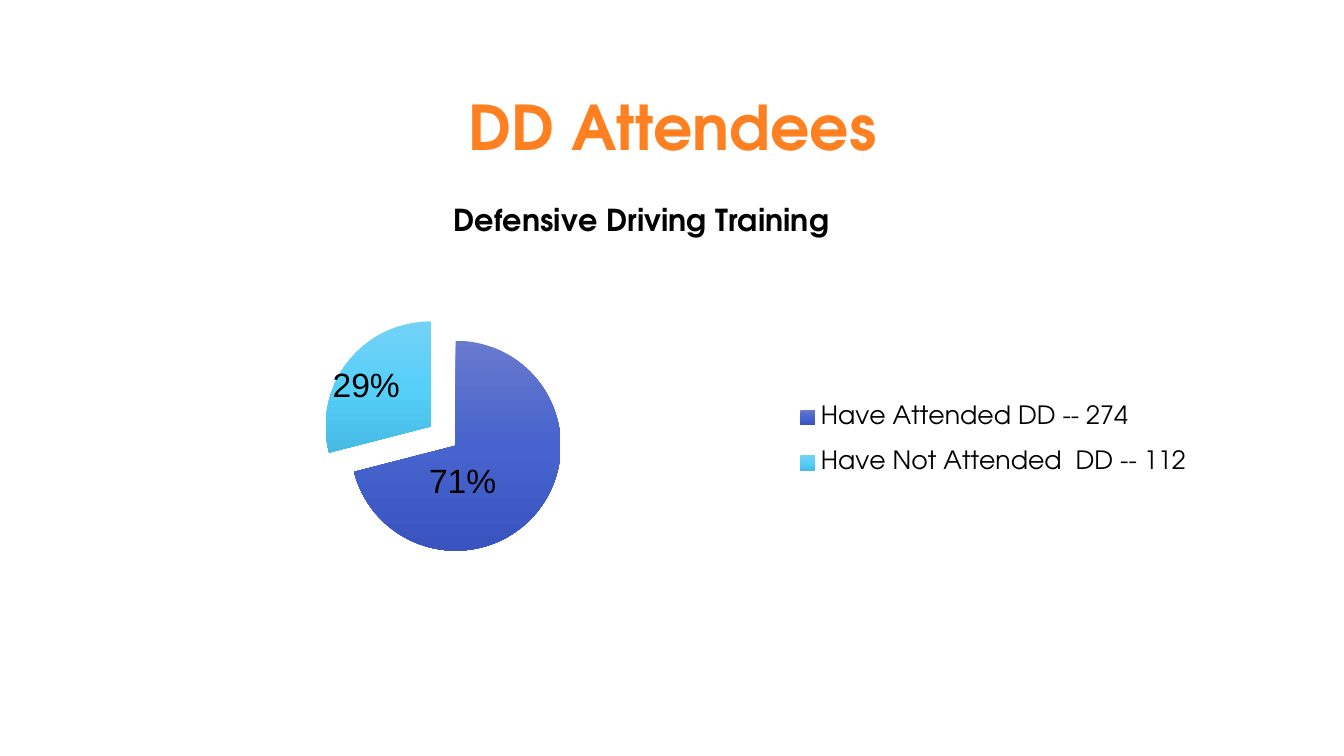
from pptx import Presentation
from pptx.chart.data import CategoryChartData
from pptx.dml.color import RGBColor
from pptx.enum.chart import XL_CHART_TYPE, XL_LEGEND_POSITION
from pptx.enum.text import MSO_ANCHOR, PP_ALIGN
from pptx.oxml import parse_xml
from pptx.oxml.ns import nsdecls
from pptx.util import Inches, Pt

PIE = XL_CHART_TYPE.PIE
RIGHT = XL_LEGEND_POSITION.RIGHT
MIDDLE = MSO_ANCHOR.MIDDLE
CENTER = PP_ALIGN.CENTER

# Content
FONT = "TeX Gyre Adventor"
LABEL_FONT = "Arial"
ORANGE = RGBColor(0xFF, 0x80, 0x21)
BLACK = RGBColor(0x00, 0x00, 0x00)
BLUE = RGBColor(0x4E, 0x67, 0xC8)
SKY = RGBColor(0x5E, 0xCC, 0xF3)
TITLE = "DD Attendees"
CHART_TITLE = "Defensive Driving Training"
EXPLOSION = 25
# category, value, explosion %, colour, label, label offset (share of chart)
SLICES = [
    ("Have Attended DD -- 274", 274, 5, BLUE, "71%", (-0.03, 0.01)),
    ("Have Not Attended  DD -- 112", 112, EXPLOSION, SKY, "29%", (-0.02, -0.02)),
]
# Gradient shades of a slice from top to bottom, in percent
SHADES = [
    {"satMod": 103, "lumMod": 102, "tint": 94},
    {"satMod": 110, "lumMod": 100, "shade": 100},
    {"lumMod": 99, "satMod": 120, "shade": 78},
]
TITLE_BOX = (0.92, 0.75, 11.5, 1.1)
CHART_BOX = (0.65, 1.85, 11.43, 4.27)
PLOT_AREA = (0.22, 0.29, 0.23, 0.61)
LEGEND_AREA = (0.62, 0.46, 0.37, 0.26)


def manual_layout(x, y, w, h, target=""):
    return parse_xml(
        f'<c:layout {nsdecls("c")}><c:manualLayout>{target}'
        '<c:xMode val="edge"/><c:yMode val="edge"/>'
        f'<c:x val="{x}"/><c:y val="{y}"/><c:w val="{w}"/><c:h val="{h}"/>'
        '</c:manualLayout></c:layout>')


def slice_point(idx, explosion, color):
    stops = ""
    for i, shade in enumerate(SHADES):
        mods = "".join(f'<a:{k} val="{v * 1000}"/>' for k, v in shade.items())
        stops += f'<a:gs pos="{i * 50000}"><a:srgbClr val="{color}">{mods}</a:srgbClr></a:gs>'
    return parse_xml(
        f'<c:dPt {nsdecls("c", "a")}><c:idx val="{idx}"/><c:bubble3D val="0"/>'
        f'<c:explosion val="{explosion}"/><c:spPr><a:gradFill><a:gsLst>{stops}</a:gsLst>'
        '<a:lin ang="5400000" scaled="0"/></a:gradFill><a:ln><a:noFill/></a:ln></c:spPr></c:dPt>')


def slice_labels(labels):
    font = (f'<a:solidFill><a:srgbClr val="{BLACK}"/></a:solidFill>'
            f'<a:latin typeface="{LABEL_FONT}"/>')
    props = f'<a:pPr><a:defRPr sz="2400" b="0">{font}</a:defRPr></a:pPr>'
    style = f'<c:txPr><a:bodyPr/><a:p>{props}<a:endParaRPr/></a:p></c:txPr>'
    show = ('<c:dLblPos val="ctr"/><c:showLegendKey val="0"/><c:showVal val="1"/>'
            '<c:showCatName val="0"/><c:showSerName val="0"/><c:showPercent val="1"/>'
            '<c:showBubbleSize val="0"/>')
    points = "".join(
        f'<c:dLbl><c:idx val="{i}"/><c:layout><c:manualLayout><c:x val="{x}"/><c:y val="{y}"/>'
        f'</c:manualLayout></c:layout><c:tx><c:rich><a:bodyPr/><a:p>{props}'
        f'<a:r><a:rPr sz="2400" b="0">{font}</a:rPr><a:t>{text}</a:t></a:r></a:p></c:rich></c:tx>'
        f'{show}</c:dLbl>'
        for i, (text, (x, y)) in enumerate(labels))
    return parse_xml(f'<c:dLbls {nsdecls("c", "a")}>{points}{style}{show}'
                     '<c:showLeaderLines val="0"/></c:dLbls>')


prs = Presentation()
prs.slide_width, prs.slide_height = Inches(13.33), Inches(7.5)
s = prs.slides.add_slide(prs.slide_layouts[6])

# Slide title
tf = s.shapes.add_textbox(*map(Inches, TITLE_BOX)).text_frame
tf.word_wrap = True
tf.vertical_anchor = MIDDLE
p = tf.paragraphs[0]
p.text = TITLE
p.alignment = CENTER
p.line_spacing = 0.9
p.font.name, p.font.size, p.font.bold = FONT, Pt(44), True
p.font.color.rgb = ORANGE

# Pie chart
data = CategoryChartData()
data.categories = [row[0] for row in SLICES]
data.add_series(CHART_TITLE, [row[1] for row in SLICES])
chart = s.shapes.add_chart(PIE, *map(Inches, CHART_BOX), data).chart
chart.font.name, chart.font.size = FONT, Pt(18)
chart.font.color.rgb = BLACK
plot = chart.plots[0]
plot.vary_by_categories = True

# Chart title
chart.has_title = True
p = chart.chart_title.text_frame.paragraphs[0]
p.text = CHART_TITLE
p.font.name, p.font.size, p.font.bold = FONT, Pt(21.6), True
p.font.color.rgb = BLACK
chart.chart_title.include_in_layout = False

# Legend
chart.has_legend = True
legend = chart.legend
legend.position = RIGHT
legend.include_in_layout = False
legend.font.name, legend.font.size = FONT, Pt(18)
legend.font.color.rgb = BLACK
for old in legend._element.xpath("c:layout"):
    legend._element.remove(old)
legend._element.xpath("c:legendPos")[0].addnext(manual_layout(*LEGEND_AREA))

# Plot position, slices and percentages
area = chart._chartSpace.xpath("c:chart/c:plotArea")[0]
for old in area.xpath("c:layout | .//c:dLbls"):
    old.getparent().remove(old)
area.insert(0, manual_layout(*PLOT_AREA, target='<c:layoutTarget val="inner"/>'))
cat = plot.series[0]._element.xpath("c:cat")[0]
cat.addprevious(parse_xml(f'<c:explosion {nsdecls("c")} val="{EXPLOSION}"/>'))
for i, (_, _, explosion, color, _, _) in enumerate(SLICES):
    cat.addprevious(slice_point(i, explosion, color))
cat.addprevious(slice_labels([row[4:] for row in SLICES]))

prs.save("out.pptx")
